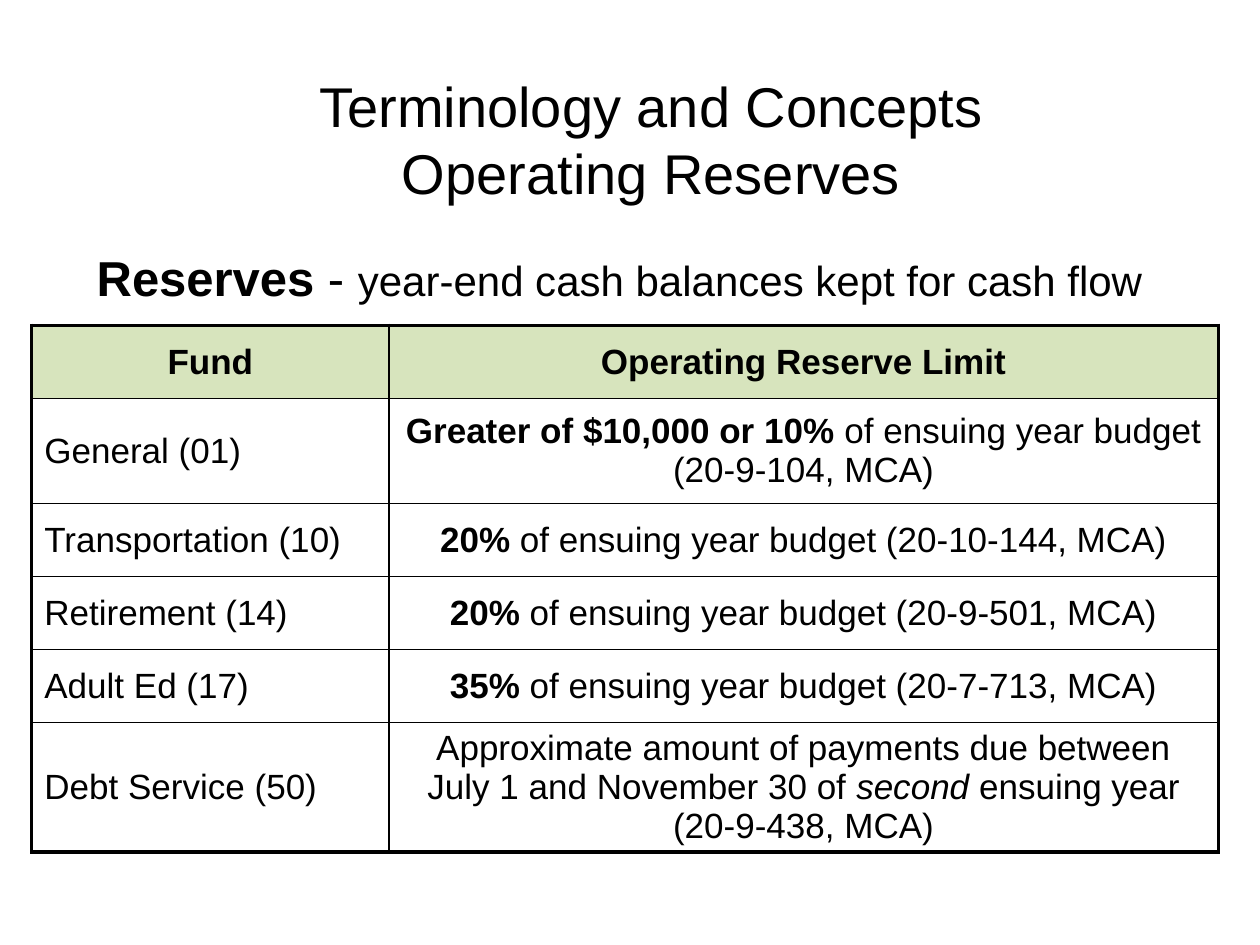
import pptx
import pptx.util
import pptx.dml.color
import pptx.enum.text
import lxml.etree
from pptx.util import Cm, Pt
from pptx.oxml.ns import qn

# Content: each text is a list of paragraphs, each paragraph a list of (text, style)
TITLE = [[("Terminology and Concepts", {})], [("Operating Reserves", {})]]
DEFINITION = [[("Reserves", {"bold": True}), (" - ", {}),
               ("year-end cash balances kept for cash flow", {"size": 24})]]
HEADER = ("Fund", "Operating Reserve Limit")
FUNDS = [
    ("General (01)", [("Greater of $10,000 or 10%", {"bold": True}),
                      (" of ensuing year budget (20-9-104, MCA)", {})]),
    ("Transportation (10)", [("20% ", {"bold": True}),
                             ("of ensuing year budget (20-10-144, MCA)", {})]),
    ("Retirement (14)", [("20%", {"bold": True}),
                         (" of ensuing year budget (20-9-501, MCA)", {})]),
    ("Adult Ed (17)", [("35%", {"bold": True}),
                       (" of ensuing year budget (20-7-713, MCA)", {})]),
    ("Debt Service (50)", [("Approximate amount of payments due between July 1 and November 30 of ", {}),
                           ("second", {"italic": True}),
                           (" ensuing year (20-9-438, MCA)", {})]),
]

# Format
COLORS = {"text": "000000", "border": "000000", "header": "D7E4BD", "body": "FFFFFF"}
FONT = "Arial"
THIN, THICK = 1, 2.25
COLUMN_WIDTHS = [7.2, 16.72]
ROW_HEIGHTS = [1.47, 2.12, 1.47, 1.47, 1.47, 2.57]
LEFT, CENTER = pptx.enum.text.PP_ALIGN.LEFT, pptx.enum.text.PP_ALIGN.CENTER
MIDDLE, TOP = pptx.enum.text.MSO_ANCHOR.MIDDLE, pptx.enum.text.MSO_ANCHOR.TOP


def rgb(name):
    return pptx.dml.color.RGBColor.from_string(COLORS[name])


def write(frame, paragraphs, size=20, align=LEFT, bold=False):
    for index, spans in enumerate(paragraphs):
        para = frame.add_paragraph() if index else frame.paragraphs[0]
        para.alignment = align
        for text, style in spans:
            span = para.add_run()
            span.text = text
            span.font.name = FONT
            span.font.size = Pt(style.get("size", size))
            span.font.bold = style.get("bold", bold)
            span.font.italic = style.get("italic", False)
            span.font.color.rgb = rgb("text")


def add_text(page, place, paragraphs, anchor=TOP, **style):
    box = page.shapes.add_textbox(*[Cm(length) for length in place])
    box.text_frame.word_wrap = True
    box.text_frame.vertical_anchor = anchor
    write(box.text_frame, paragraphs, **style)


def set_borders(cell, widths):
    # Border lines must come before the fill in the cell properties
    properties = cell._tc.get_or_add_tcPr()
    for index, (side, width) in enumerate(widths.items()):
        line = lxml.etree.Element(qn("a:ln" + side), w=str(Pt(width)))
        fill = lxml.etree.SubElement(line, qn("a:solidFill"))
        lxml.etree.SubElement(fill, qn("a:srgbClr"), val=COLORS["border"])
        properties.insert(index, line)


def add_fund_table(page, left, top):
    rows = [(HEADER[0], [(HEADER[1], {})])] + FUNDS
    table = page.shapes.add_table(len(rows), 2, Cm(left), Cm(top),
                                  Cm(sum(COLUMN_WIDTHS)), Cm(sum(ROW_HEIGHTS))).table
    for column, width in zip(table.columns, COLUMN_WIDTHS):
        column.width = Cm(width)
    for row, height in zip(table.rows, ROW_HEIGHTS):
        row.height = Cm(height)

    last = len(rows) - 1
    for r, (fund, limit) in enumerate(rows):
        is_header = r == 0
        for c, spans in enumerate(([(fund, {})], limit)):
            cell = table.cell(r, c)
            cell.vertical_anchor = MIDDLE
            cell.fill.solid()
            cell.fill.fore_color.rgb = rgb("header" if is_header else "body")
            write(cell.text_frame, [spans], bold=is_header,
                  align=CENTER if is_header or c == 1 else LEFT)
            # Thick outline, thin inner lines
            set_borders(cell, {"L": THICK if c == 0 else THIN,
                               "R": THICK if c == 1 else THIN,
                               "T": THICK if is_header else THIN,
                               "B": THICK if r == last else THIN})


def main():
    deck = pptx.Presentation()
    deck.slide_width, deck.slide_height = Cm(25.4), Cm(19.05)
    page = deck.slides.add_slide(deck.slide_layouts[6])
    add_fund_table(page, 0.64, 6.56)
    add_text(page, (1.7, 1.2, 22.86, 3.18), TITLE, anchor=MIDDLE, size=32, align=CENTER)
    add_text(page, (1.7, 4.87, 22, 1.7), DEFINITION, size=28)
    deck.save("out.pptx")


if __name__ == "__main__":
    main()
